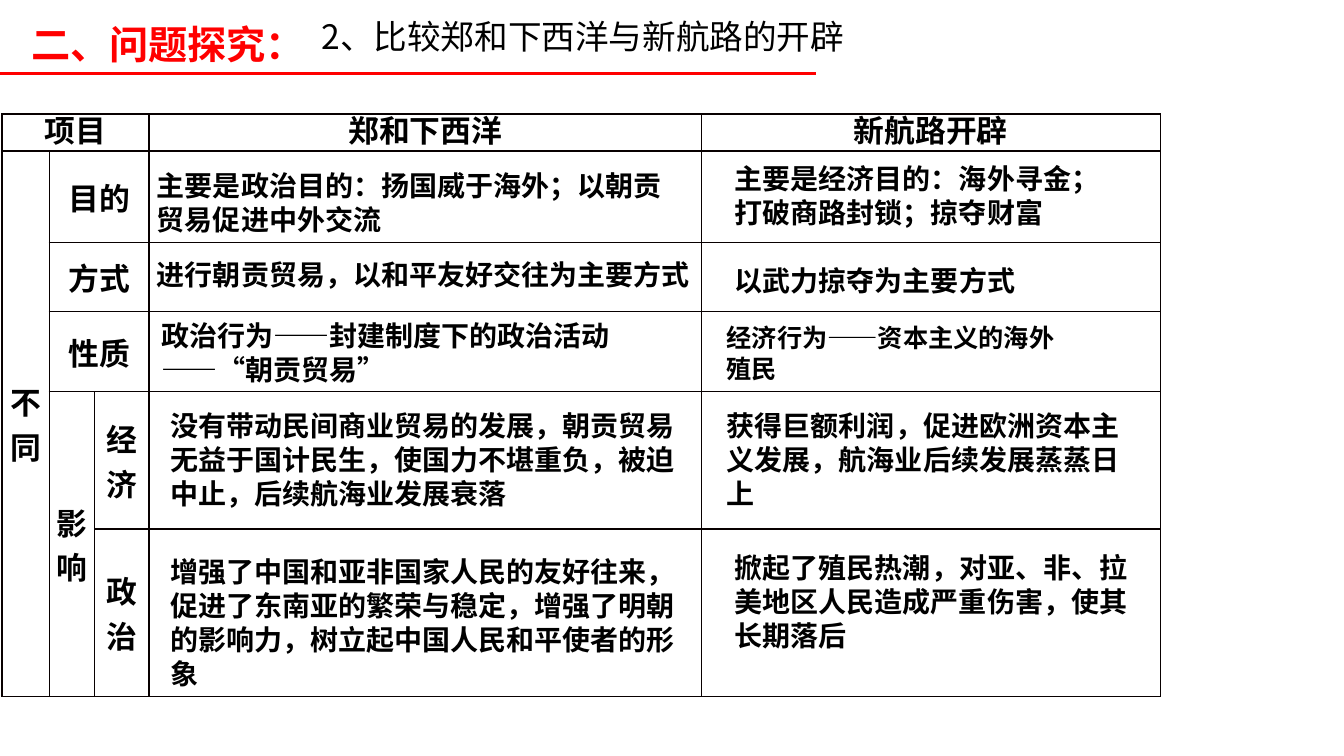
from lxml import etree
from pptx import Presentation
from pptx.dml.color import RGBColor
from pptx.enum import shapes, text
from pptx.oxml import ns
from pptx.util import Pt

RED = RGBColor(0xFF, 0x00, 0x00)
BLACK = RGBColor(0x00, 0x00, 0x00)
BORDER = RGBColor(0x08, 0x00, 0x00)
SANS = "Noto Sans CJK SC"
SANS_JP = "Noto Sans CJK JP"
SERIF = "Times New Roman"

COLUMN_WIDTHS = [33.8, 32.4, 38.9, 394.6, 327.6]
ROW_HEIGHTS = [26.4, 65.5, 49, 57.6, 98, 119.5]
MERGES = [(0, 0, 0, 2), (1, 0, 5, 0), (1, 1, 1, 2), (2, 1, 2, 2), (3, 1, 3, 2), (4, 1, 5, 1)]
HEADINGS = [
    (0, 0, "项目"), (0, 3, "郑和下西洋"), (0, 4, "新航路开辟"), (1, 0, "不同"), (1, 1, "目的"),
    (2, 1, "方式"), (3, 1, "性质"), (4, 1, "影响"), (4, 2, "经济"), (5, 2, "政治"),
]
ANSWERS = [
    (105, 116.6, 387.4, 20, SANS, "主要是政治目的：扬国威于海外；以朝贡贸易促进中外交流"),
    (517.7, 111.6, 257, 20, SANS, "主要是经济目的：海外寻金；打破商路封锁；掠夺财富"),
    (105, 180, 406, 20, SERIF, "进行朝贡贸易，以和平友好交往为主要方式"),
    (517.7, 184.3, 234, 20, SANS, "以武力掠夺为主要方式"),
    (108, 223.9, 384.5, 20, SANS, "政治行为——封建制度下的政治活动——“朝贡贸易”"),
    (512, 226.8, 255.6, 18, SERIF, "经济行为——资本主义的海外殖民"),
    (114.5, 288, 387.4, 20, SANS,
     "没有带动民间商业贸易的发展，朝贡贸易无益于国计民生，使国力不堪重负，被迫中止，后续航海业发展衰落"),
    (512, 288, 303, 20, SERIF, "获得巨额利润，促进欧洲资本主义发展，航海业后续发展蒸蒸日上"),
    (114.5, 392.4, 375.8, 20, SANS,
     "增强了中国和亚非国家人民的友好往来，促进了东南亚的繁荣与稳定，增强了明朝的影响力，树立起中国人民和平使者的形象"),
    (517.7, 389.5, 297.4, 20, SERIF, "掀起了殖民热潮，对亚、非、拉美地区人民造成严重伤害，使其长期落后"),
]


def format_run(run, size, font_name, color, bold):
    """Set the Latin and East Asian fonts, size, colour and weight of a run."""
    run.font.name = font_name
    run.font.size = Pt(size)
    run.font.bold = bold
    run.font.color.rgb = color
    east_asian = etree.SubElement(run.font._element, ns.qn("a:ea"))
    east_asian.set("typeface", SANS if font_name == SERIF else font_name)


def add_text(slide, left, top, width, size, font_name, content, color=BLACK, bold=True, wrap=True):
    """Add a text box whose commas stay in the sans font."""
    box = slide.shapes.add_textbox(Pt(left), Pt(top), Pt(width), Pt(size * 1.2 + 7.2))
    frame = box.text_frame
    frame.word_wrap = wrap
    frame.auto_size = text.MSO_AUTO_SIZE.SHAPE_TO_FIT_TEXT
    paragraph = frame.paragraphs[0]
    paragraph.line_spacing = Pt(round(size * 1.21, 1))
    pieces = content.replace("，", "|，|").split("|") if font_name == SERIF else [content]
    for piece in pieces:
        run = paragraph.add_run()
        run.text = piece
        format_run(run, size, SANS if piece == "，" else font_name, color, bold)


def add_rule(slide, left, right, y):
    """Add the red line under the title."""
    rule = slide.shapes.add_connector(
        shapes.MSO_CONNECTOR.STRAIGHT, Pt(left), Pt(y), Pt(right), Pt(y))
    rule.line.color.rgb = RED
    rule.line.width = Pt(2.25)
    etree.SubElement(rule._element.spPr, ns.qn("a:effectLst"))


def format_cell(cell):
    """Give a cell thin borders, small margins and no fill."""
    properties = cell._tc.get_or_add_tcPr()
    for side in ("a:lnL", "a:lnR", "a:lnT", "a:lnB"):
        line = etree.SubElement(properties, ns.qn(side), w=str(Pt(1)))
        fill = etree.SubElement(line, ns.qn("a:solidFill"))
        etree.SubElement(fill, ns.qn("a:srgbClr"), val=str(BORDER))
    cell.fill.background()
    cell.margin_left = cell.margin_right = Pt(4.3)
    cell.margin_top = cell.margin_bottom = 0
    cell.vertical_anchor = text.MSO_ANCHOR.MIDDLE


def add_comparison_table(slide, left, top):
    """Add the grid with its merged headings."""
    table = slide.shapes.add_table(
        len(ROW_HEIGHTS), len(COLUMN_WIDTHS), Pt(left), Pt(top),
        Pt(sum(COLUMN_WIDTHS)), Pt(sum(ROW_HEIGHTS))).table
    table.first_row = table.horz_banding = False
    for column, width in zip(table.columns, COLUMN_WIDTHS):
        column.width = Pt(width)
    for row, height in zip(table.rows, ROW_HEIGHTS):
        row.height = Pt(height)
    for cell in table.iter_cells():
        format_cell(cell)
    for first_row, first_column, last_row, last_column in MERGES:
        table.cell(first_row, first_column).merge(table.cell(last_row, last_column))
    for row, column, heading in HEADINGS:
        cell = table.cell(row, column)
        cell.text_frame.text = heading
        paragraph = cell.text_frame.paragraphs[0]
        paragraph.alignment = text.PP_ALIGN.CENTER
        paragraph.line_spacing = Pt(32 if row else 26.4)
        format_run(paragraph.runs[0], 22, SANS, BLACK, True)


def main():
    """Build the slide and save it."""
    presentation = Presentation()
    presentation.slide_width = Pt(960)
    presentation.slide_height = Pt(540)
    slide = presentation.slides.add_slide(presentation.slide_layouts[6])
    add_text(slide, 15.1, 10.8, 213, 28, SANS_JP, "二、问题探究：", color=RED, wrap=False)
    add_rule(slide, 0, 583.2, 52.6)
    add_comparison_table(slide, 1.4, 81.4)
    for answer in ANSWERS:
        add_text(slide, *answer)
    add_text(slide, 222.5, 7.9, 411.8, 24, SANS, "2、比较郑和下西洋与新航路的开辟", bold=False)
    presentation.save("out.pptx")


if __name__ == "__main__":
    main()
